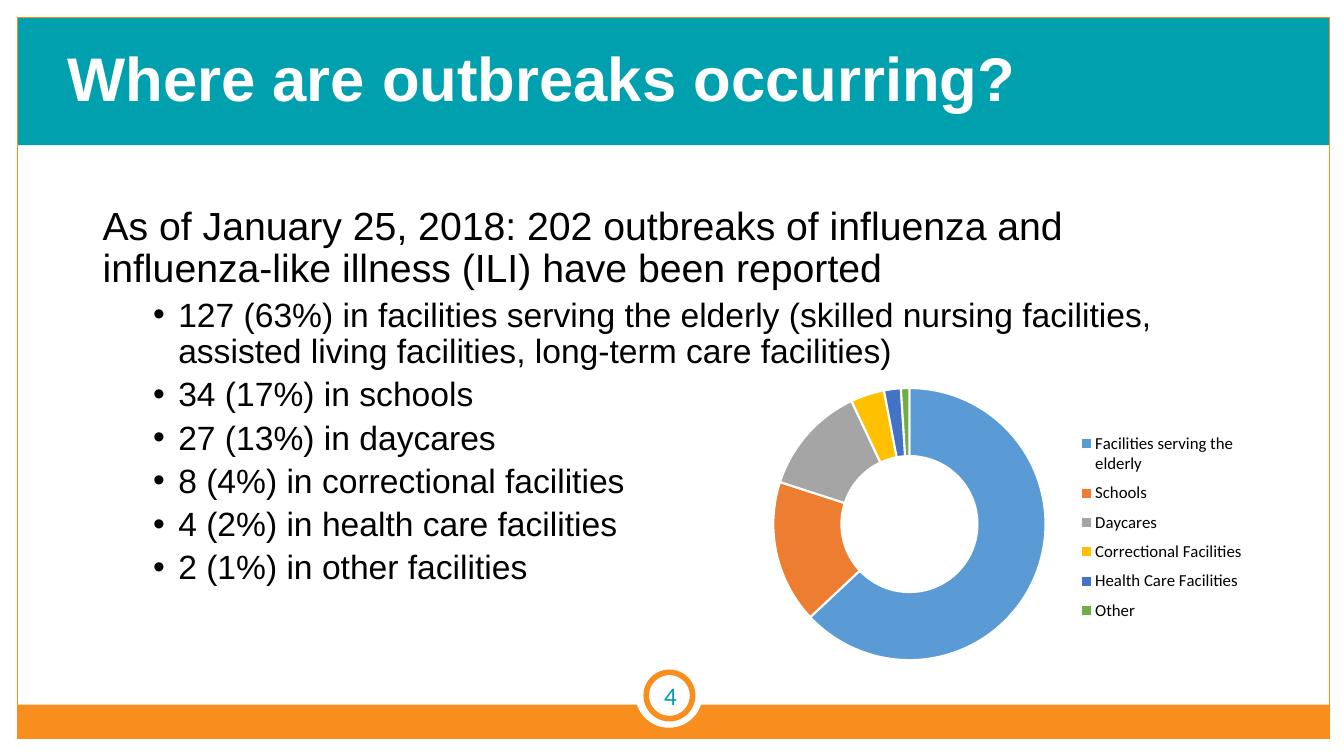
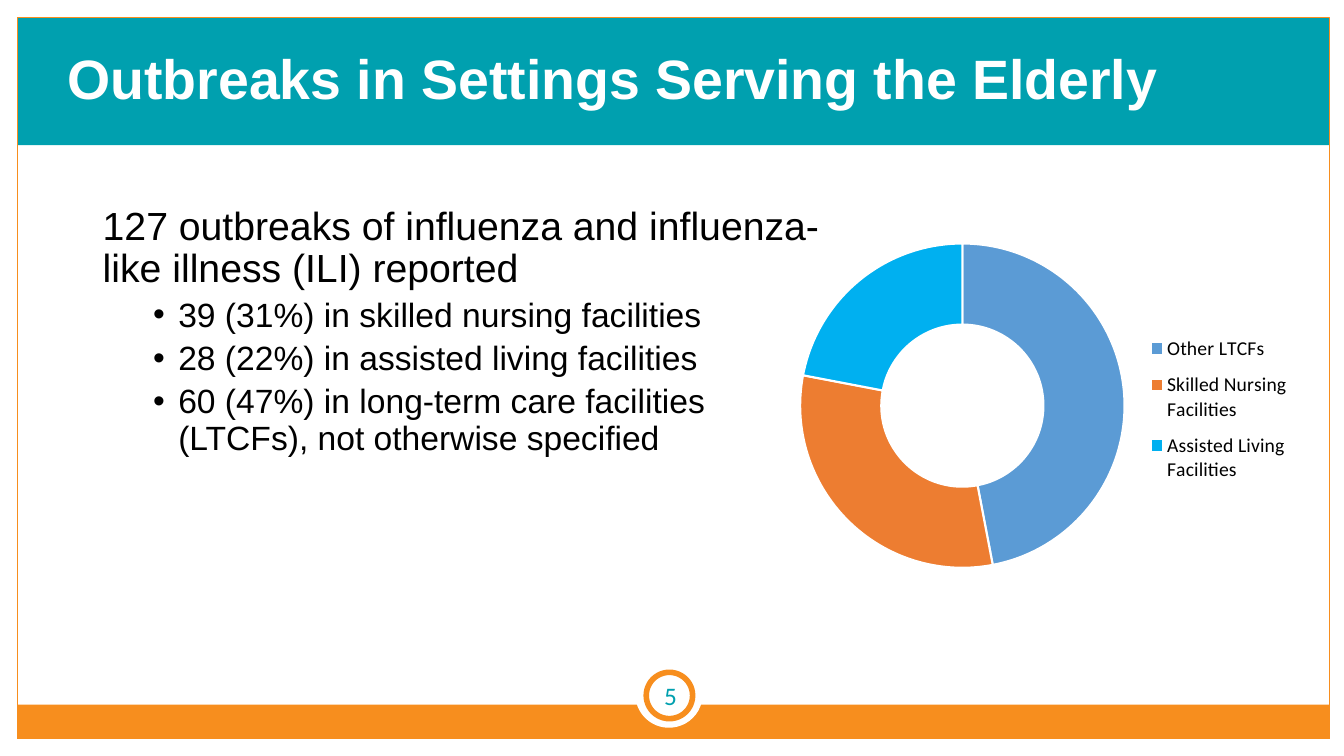
from pptx import Presentation
from pptx.chart.data import CategoryChartData
from pptx.dml.color import RGBColor
from pptx.enum.chart import XL_CHART_TYPE, XL_LEGEND_POSITION
from pptx.enum.shapes import MSO_SHAPE
from pptx.enum.text import MSO_ANCHOR, PP_ALIGN
from pptx.oxml import parse_xml
from pptx.oxml.ns import nsdecls, qn
from pptx.util import Inches, Pt

RECT, OVAL = MSO_SHAPE.RECTANGLE, MSO_SHAPE.OVAL
TOP, MIDDLE = MSO_ANCHOR.TOP, MSO_ANCHOR.MIDDLE
LEFT, CENTER = PP_ALIGN.LEFT, PP_ALIGN.CENTER
DOUGHNUT = XL_CHART_TYPE.DOUGHNUT
LEGEND_RIGHT = XL_LEGEND_POSITION.RIGHT

COLORS = {
    "teal": "00A0AF", "amber": "F78E1E", "white": "FFFFFF", "black": "000000",
    "blue": "5B9BD5", "orange": "ED7D31", "gray": "A5A5A5", "gold": "FFC000",
    "navy": "4472C4", "green": "70AD47", "sky": "00B0F0",
}
RGB = {name: RGBColor.from_string(value) for name, value in COLORS.items()}

# Frame shared by the slides: shape, box, fill, line, line width
FRAME = [
    (RECT, (0.17, 0.18, 13.02, 1.26), "teal", None, 0),
    (RECT, (0.17, 0.17, 13.02, 7.16), None, "amber", 0.75),
    (RECT, (0.17, 6.99, 13.02, 0.34), "amber", None, 0),
    (OVAL, (6.3, 6.55, 0.67, 0.67), "white", None, 0),
    (OVAL, (6.41, 6.67, 0.46, 0.46), "white", "amber", 4),
]

# Text styles
TITLE = {"name": "Arial", "bold": True, "color": "white"}
LEAD = {"name": "Arial", "size": 28, "color": "black"}
BULLET = {"name": "Arial", "size": 24, "color": "black"}
NUMBER = {"name": "Calibri", "size": 18, "color": "teal"}

# Plot and legend areas are x, y, width, height as shares of the chart
SLIDES = [
    {
        "number": "4",
        "title": "Where are outbreaks occurring?",
        "title_size": 44,
        "body_width": 11.5,
        "lead": "As of January 25, 2018: 202 outbreaks of influenza and "
                "influenza-like illness (ILI) have been reported",
        "bullets": [
            "127 (63%) in facilities serving the elderly (skilled nursing "
            "facilities, assisted living facilities, long-term care facilities)",
            "34 (17%) in schools",
            "27 (13%) in daycares",
            "8 (4%) in correctional facilities",
            "4 (2%) in health care facilities",
            "2 (1%) in other facilities",
        ],
        "chart_box": (7.42, 3.7, 5, 3),
        "plot_area": (0.05, 0.05, 0.54, 0.9),
        "legend_area": (0.64, 0.17, 0.36, 0.68),
        "legend_size": 12,
        "shares": [
            ("Facilities serving the elderly", 63, "blue"),
            ("Schools", 17, "orange"),
            ("Daycares", 13, "gray"),
            ("Correctional Facilities", 4, "gold"),
            ("Health Care Facilities", 2, "navy"),
            ("Other", 1, "green"),
        ],
    },
    {
        "number": "5",
        "title": "Outbreaks in Settings Serving the Elderly",
        "title_size": 39.6,
        "body_width": 7.49,
        "lead": "127 outbreaks of influenza and influenza-like illness (ILI) reported",
        "bullets": [
            "39 (31%) in skilled nursing facilities",
            "28 (22%) in assisted living facilities",
            "60 (47%) in long-term care facilities (LTCFs), not otherwise specified",
        ],
        "chart_box": (7.41, 2.27, 5.85, 3.51),
        "plot_area": (0.09, 0.04, 0.55, 0.92),
        "legend_area": (0.66, 0.27, 0.28, 0.48),
        "legend_size": 14,
        "shares": [
            ("Other LTCFs", 47, "blue"),
            ("Skilled Nursing Facilities", 31, "orange"),
            ("Assisted Living Facilities", 22, "sky"),
        ],
    },
]


def add_text(slide, box, paragraphs, anchor=TOP, align=LEFT, spacing=0.9):
    """Add a text box; paragraphs are (text, style) pairs."""
    frame = slide.shapes.add_textbox(*map(Inches, box)).text_frame
    frame.word_wrap = True
    frame.vertical_anchor = anchor
    for i, (text, style) in enumerate(paragraphs):
        paragraph = frame.paragraphs[0] if i == 0 else frame.add_paragraph()
        if style is BULLET:
            paragraph.level = 1
            props = paragraph._p.get_or_add_pPr()
            props.set("marL", str(Inches(0.75)))
            props.set("indent", str(Inches(-0.25)))
            props.append(parse_xml(f'<a:buFont {nsdecls("a")} typeface="Arial"/>'))
            props.append(parse_xml(f'<a:buChar {nsdecls("a")} char="•"/>'))
            paragraph.space_before = Pt(5)
        paragraph.alignment = align
        paragraph.line_spacing = spacing
        run = paragraph.add_run()
        run.text = text
        for key, value in style.items():
            if key == "color":
                run.font.color.rgb = RGB[value]
            else:
                setattr(run.font, key, Pt(value) if key == "size" else value)


def set_layout(element, position, area):
    """Place a chart part by shares of the chart's width and height."""
    for old in element.findall(qn("c:layout")):
        element.remove(old)
    target = '<c:layoutTarget val="inner"/>' if element.tag == qn("c:plotArea") else ""
    modes = '<c:xMode val="edge"/><c:yMode val="edge"/>'
    sizes = "".join(f'<c:{key} val="{value}"/>' for key, value in zip("xywh", area))
    element.insert(position, parse_xml(
        f'<c:layout {nsdecls("c")}><c:manualLayout>{target}{modes}{sizes}'
        "</c:manualLayout></c:layout>"))


prs = Presentation()
prs.slide_width, prs.slide_height = Inches(13.33), Inches(7.5)

for content in SLIDES:
    slide = prs.slides.add_slide(prs.slide_layouts[6])

    # Bands, border and number badge
    for kind, box, fill, line, width in FRAME:
        part = slide.shapes.add_shape(kind, *map(Inches, box))
        part.shadow.inherit = False
        if fill:
            part.fill.solid()
            part.fill.fore_color.rgb = RGB[fill]
        else:
            part.fill.background()
        if line:
            part.line.color.rgb = RGB[line]
            part.line.width = Pt(width)
        else:
            part.line.fill.background()

    # Title, body and slide number
    title_style = {**TITLE, "size": content["title_size"]}
    add_text(slide, (0.57, 0.18, 11.48, 1.25), [(content["title"], title_style)], MIDDLE)
    body = [(content["lead"], LEAD)] + [(text, BULLET) for text in content["bullets"]]
    add_text(slide, (0.92, 2, content["body_width"], 4.76), body)
    add_text(slide, (6.3, 6.7, 0.7, 0.4), [(content["number"], NUMBER)],
             MIDDLE, CENTER, 1.0)

    # Doughnut of outbreak shares
    names, values, hues = zip(*content["shares"])
    data = CategoryChartData()
    data.categories = names
    data.add_series("Series 1", values)
    chart = slide.shapes.add_chart(
        DOUGHNUT, *map(Inches, content["chart_box"]), data).chart
    chart.has_title = False
    chart.font.name = "Calibri"
    chart.font.size = Pt(10)
    chart.font.color.rgb = RGB["black"]
    plot = chart.plots[0]
    plot.vary_by_categories = True
    for i, hue in enumerate(hues):
        slice_format = plot.series[0].points[i].format
        slice_format.fill.solid()
        slice_format.fill.fore_color.rgb = RGB[hue]
        slice_format.line.color.rgb = RGB["white"]
        slice_format.line.width = Pt(1.5)

    # Legend
    chart.has_legend = True
    legend = chart.legend
    legend.position = LEGEND_RIGHT
    legend.include_in_layout = False
    legend.font.name = "Calibri"
    legend.font.size = Pt(content["legend_size"])
    legend.font.color.rgb = RGB["black"]

    # Chart geometry, hole and clear background
    chart_root = chart._chartSpace
    set_layout(chart_root.find(".//" + qn("c:plotArea")), 0, content["plot_area"])
    set_layout(chart_root.find(".//" + qn("c:legend")), 1, content["legend_area"])
    chart_root.find(".//" + qn("c:holeSize")).set("val", "75")
    chart_root.find(qn("c:chart")).addnext(parse_xml(
        f'<c:spPr {nsdecls("c", "a")}><a:noFill/><a:ln><a:noFill/></a:ln></c:spPr>'))

prs.save("out.pptx")
